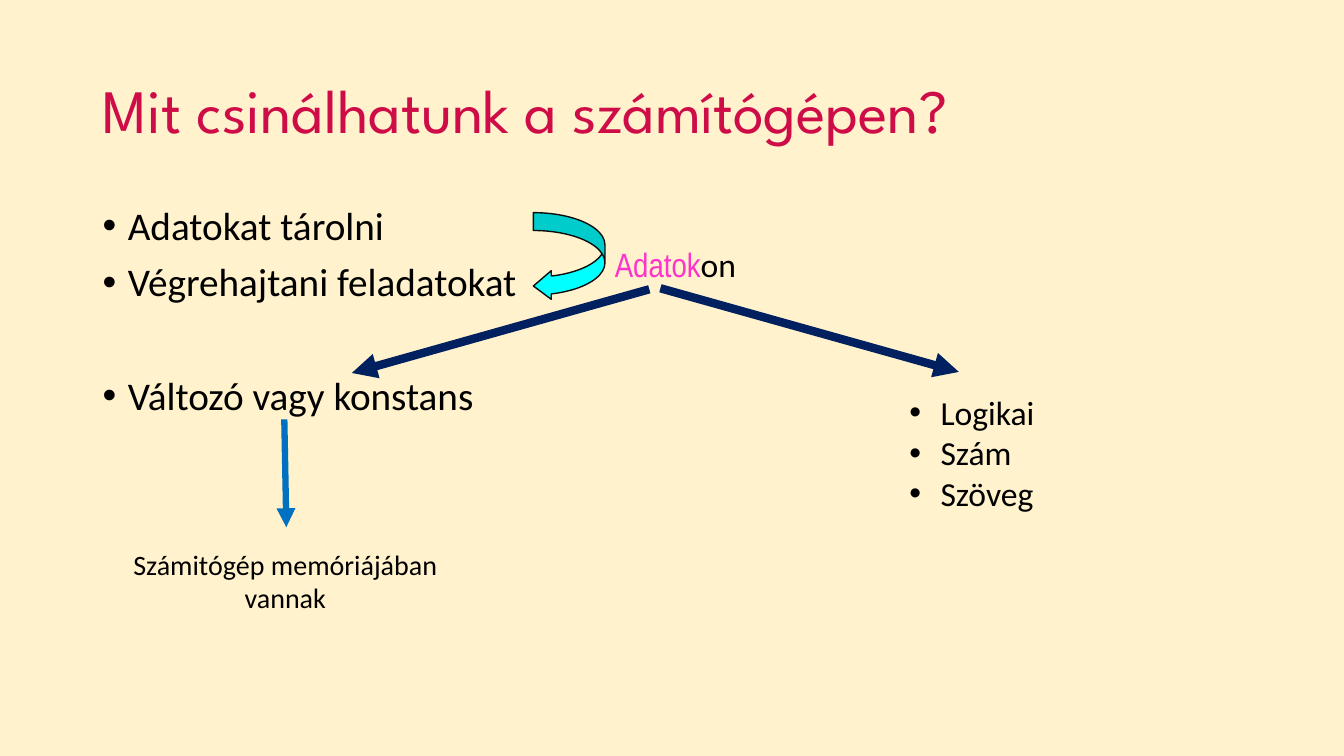
import pptx
import pptx.dml.color
import pptx.enum.shapes
import pptx.enum.text
import pptx.oxml.ns
import pptx.util
from lxml import etree

Inches = pptx.util.Inches
Pt = pptx.util.Pt
RGBColor = pptx.dml.color.RGBColor
qn = pptx.oxml.ns.qn
Align = pptx.enum.text.PP_ALIGN
Anchor = pptx.enum.text.MSO_ANCHOR

CREAM = RGBColor(0xFF, 0xF2, 0xCC)
RED = RGBColor(0xCE, 0x0C, 0x48)
BLACK = RGBColor(0, 0, 0)
INK = RGBColor(0x0D, 0x0D, 0x0D)
CYAN = RGBColor(0, 0xFF, 0xFF)
PINK = RGBColor(0xFF, 0x33, 0xCC)
NAVY = RGBColor(0, 0x20, 0x60)
BLUE = RGBColor(0, 0x70, 0xC0)

BODY = "Calibri"


def apply(target, values):
    for name, value in values.items():
        setattr(target, name, value)


def add_box(slide, place, **frame):
    box = slide.shapes.add_textbox(*map(Inches, place))
    text = box.text_frame
    apply(text, {"word_wrap": True, **frame})
    return text


def add_line(text, runs, size, **form):
    """Add a paragraph of (words, font, colour) runs."""
    first = text.paragraphs[0]
    para = text.add_paragraph() if first.runs else first
    apply(para, form)
    for words, face, color in runs:
        run = para.add_run()
        run.text = words
        apply(run.font, {"name": face, "size": Pt(size)})
        run.font.color.rgb = color
    return para


def add_bullet(para, indent):
    props = para._p.get_or_add_pPr()
    props.set("marL", str(Inches(indent)))
    props.set("indent", str(-Inches(indent)))
    etree.SubElement(props, qn("a:buFont")).set("typeface", "Arial")
    etree.SubElement(props, qn("a:buChar")).set("char", "•")


def add_arrow(slide, start, end, color, width):
    kind = pptx.enum.shapes.MSO_CONNECTOR.STRAIGHT
    arrow = slide.shapes.add_connector(kind, *map(Inches, start + end))
    arrow.line.color.rgb = color
    arrow.line.width = Pt(width)
    line = arrow.line._get_or_add_ln()
    etree.SubElement(line, qn("a:tailEnd")).set("type", "triangle")
    etree.SubElement(arrow._element.spPr, qn("a:effectLst"))


def add_curve(slide, place):
    kind = pptx.enum.shapes.MSO_SHAPE.CURVED_LEFT_ARROW
    curve = slide.shapes.add_shape(kind, *map(Inches, place))
    for spot, value in enumerate((0.25, 0.4, 0.25)):
        curve.adjustments[spot] = value
    curve.shadow.inherit = False
    curve.fill.solid()
    curve.fill.fore_color.rgb = CYAN
    curve.line.color.rgb = INK
    curve.line.width = Pt(1)


def main():
    deck = pptx.Presentation()
    apply(deck, {"slide_width": Inches(13.33), "slide_height": Inches(7.5)})
    slide = deck.slides.add_slide(deck.slide_layouts[6])
    slide.background.fill.solid()
    slide.background.fill.fore_color.rgb = CREAM

    title = add_box(slide, (0.92, 0.4, 11.5, 1.45),
                    vertical_anchor=Anchor.MIDDLE)
    add_line(title, [("Mit csinálhatunk a számítógépen?", "League Spartan", RED)],
             44, line_spacing=0.9)

    tasks = add_box(slide, (0.92, 2, 11.5, 4.76))
    for words, gap in (("Adatokat tárolni", 10),
                       ("Végrehajtani feladatokat", 10),
                       ("Változó vagy konstans", 51)):
        para = add_line(tasks, [(words, BODY, BLACK)], 28,
                        line_spacing=0.9, space_before=Pt(gap))
        add_bullet(para, 0.25)

    add_curve(slide, (5.29, 2.11, 0.71, 0.87))

    data = add_box(slide, (6, 2.37, 1.75, 0.5))
    add_line(data, [("Adatok", "Arial Narrow", PINK), ("on", BODY, BLACK)], 24)

    types = add_box(slide, (8.92, 3.84, 3.21, 1.31))
    for words in ("Logikai", "Szám", "Szöveg"):
        add_bullet(add_line(types, [(words, BODY, BLACK)], 24), 0.31)

    store = add_box(slide, (0.95, 5.38, 3.76, 0.77))
    add_line(store, [("Számitógép memóriájában vannak", BODY, BLACK)], 20,
             alignment=Align.CENTER)

    add_arrow(slide, (6.44, 2.87), (3.49, 3.7), NAVY, 6)
    add_arrow(slide, (6.55, 2.86), (9.51, 3.69), NAVY, 6)
    add_arrow(slide, (2.82, 4.16), (2.84, 5.23), BLUE, 4.5)

    deck.save("out.pptx")


if __name__ == "__main__":
    main()
